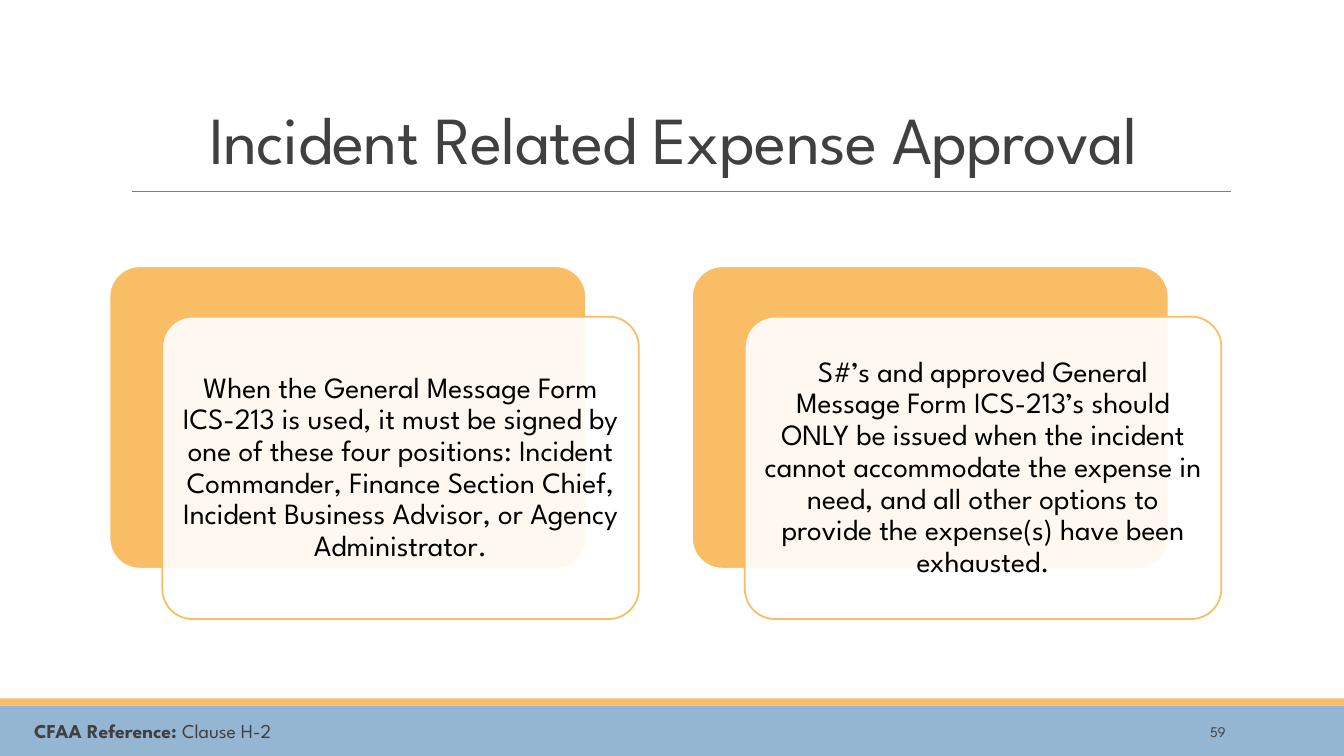
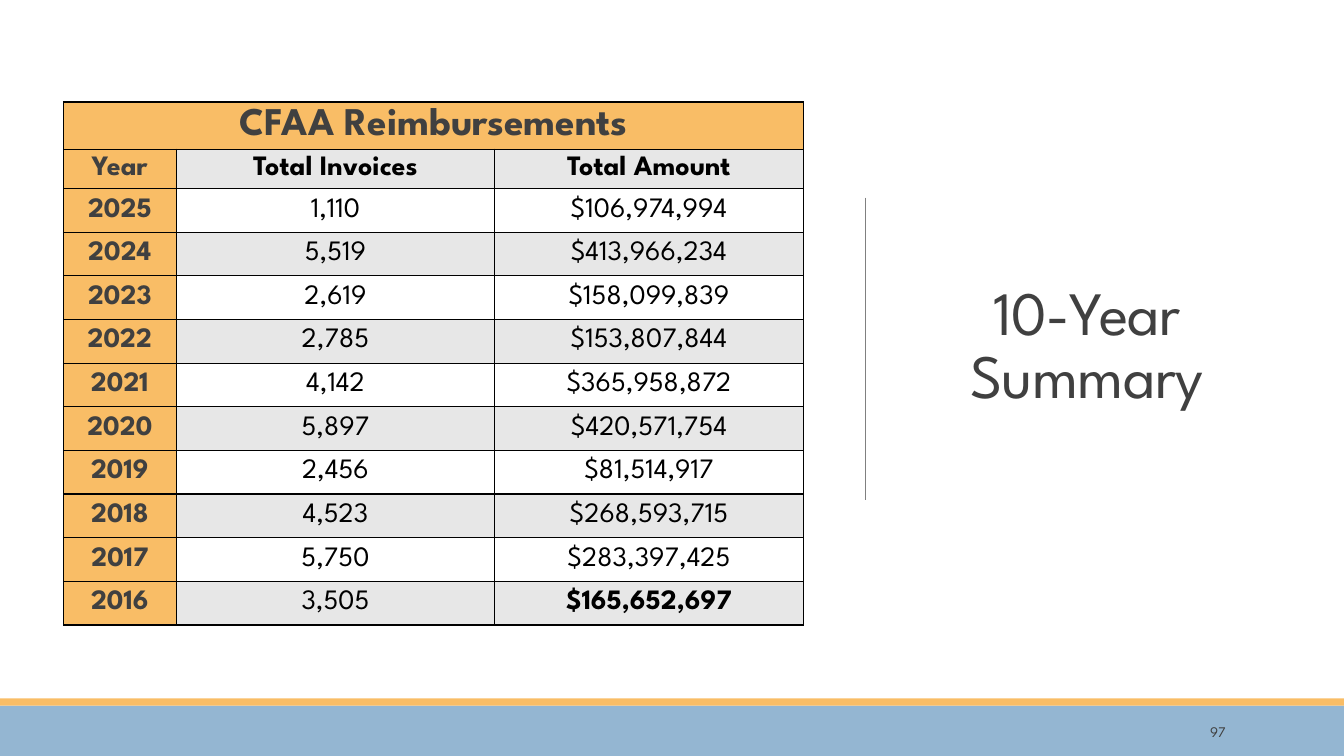
"""Build the expense approval and ten-year reimbursement slides."""
from lxml.etree import SubElement
from pptx import Presentation
from pptx.dml.color import RGBColor
from pptx.enum.shapes import MSO_CONNECTOR, MSO_SHAPE
from pptx.enum.text import MSO_ANCHOR, MSO_AUTO_SIZE, PP_ALIGN
from pptx.oxml import parse_xml
from pptx.oxml.ns import nsdecls, qn
from pptx.util import Cm, Pt

BLUE = RGBColor(0x94, 0xB6, 0xD2)
ORANGE = RGBColor(0xF9, 0xBD, 0x66)
DARK = RGBColor(0x40, 0x40, 0x40)
GREY = RGBColor(0x80, 0x80, 0x80)
LIGHT = RGBColor(0xE7, 0xE7, 0xE7)
BLACK = RGBColor(0, 0, 0)
WHITE = RGBColor(0xFF, 0xFF, 0xFF)
FONT = "League Spartan"


def add_run(paragraph, text, size, color=DARK, bold=False):
    run = paragraph.add_run()
    run.text = text
    run.font.name = FONT
    run.font.size = Pt(size)
    run.font.bold = bold
    run.font.color.rgb = color
    return run


def add_block(slide, kind, left, top, width, height, fill, line=None):
    shape = slide.shapes.add_shape(kind, Cm(left), Cm(top), Cm(width), Cm(height))
    shape.shadow.inherit = False
    shape.fill.solid()
    shape.fill.fore_color.rgb = fill
    if line is None:
        shape.line.fill.background()
    else:
        shape.line.color.rgb = line
        shape.line.width = Pt(1.25)
    return shape


presentation = Presentation()
presentation.slide_width = Cm(33.87)
presentation.slide_height = Cm(19.05)

outlines = [
    ("Incident Related Expense Approval", 48, (3.15, 1.27, 27.64, 3.35),
     MSO_ANCHOR.BOTTOM, (3.33, 4.83, 31.01, 4.83), "59"),
    ("10-Year Summary", 44, (22.71, 1.75, 9.37, 14.05),
     MSO_ANCHOR.MIDDLE, (21.82, 4.98, 21.82, 12.6), "97"),
]
slides = []
title_runs = []
for heading, size, box, anchor, rule_ends, number in outlines:
    slide = presentation.slides.add_slide(presentation.slide_layouts[5])
    slides.append(slide)

    add_block(slide, MSO_SHAPE.RECTANGLE, 0, 17.78, 33.87, 1.27, BLUE)
    add_block(slide, MSO_SHAPE.RECTANGLE, 0, 17.6, 33.87, 0.18, ORANGE)
    rule = slide.shapes.add_connector(MSO_CONNECTOR.STRAIGHT, *map(Cm, rule_ends))
    rule.line.color.rgb = GREY
    rule.line.width = Pt(0.5)
    SubElement(rule._element.spPr, qn("a:effectLst"))

    title = slide.shapes.title
    title.left, title.top, title.width, title.height = map(Cm, box)
    title.text_frame.auto_size = MSO_AUTO_SIZE.NONE
    title.text_frame.vertical_anchor = anchor
    paragraph = title.text_frame.paragraphs[0]
    paragraph.alignment = PP_ALIGN.CENTER
    paragraph.line_spacing = 0.85
    run = add_run(paragraph, heading, size)
    run.font._element.set("spc", "-50")
    title_runs.append(run)

    number_box = slide.shapes.add_textbox(Cm(27.51), Cm(17.93), Cm(3.63), Cm(1.02))
    number_box.text_frame.word_wrap = True
    number_box.text_frame.vertical_anchor = MSO_ANCHOR.MIDDLE
    paragraph = number_box.text_frame.paragraphs[0]
    paragraph.alignment = PP_ALIGN.RIGHT
    add_run(paragraph, number, 10.5)

approval_slide, summary_slide = slides

title_fill = title_runs[0].font._element.find(qn("a:solidFill"))
title_fill.addnext(parse_xml(
    f'<a:effectLst {nsdecls("a")}><a:outerShdw blurRad="38100" dist="38100" dir="2700000">'
    '<a:srgbClr val="000000"><a:alpha val="43000"/></a:srgbClr></a:outerShdw></a:effectLst>'))

statements = [
    "When the General Message Form ICS-213 is used, it must be signed by one of these "
    "four positions: Incident Commander, Finance Section Chief, Incident Business "
    "Advisor, or Agency Administrator.",
    "S#’s and approved General Message Form ICS-213’s should ONLY be issued when the "
    "incident cannot accommodate the expense in need, and all other options to provide "
    "the expense(s) have been exhausted.",
]
for index, statement in enumerate(statements):
    left = 2.76 + index * 14.68
    back = add_block(approval_slide, MSO_SHAPE.ROUNDED_RECTANGLE,
                     left, 6.71, 12.01, 7.62, ORANGE, WHITE)
    card = add_block(approval_slide, MSO_SHAPE.ROUNDED_RECTANGLE,
                     left + 1.33, 7.98, 12.01, 7.62, WHITE, ORANGE)
    back.adjustments[0] = card.adjustments[0] = 0.1
    fill_color = card._element.spPr.find(qn("a:solidFill"))[0]
    SubElement(fill_color, qn("a:alpha")).set("val", "90000")
    frame = card.text_frame
    frame.word_wrap = True
    frame.vertical_anchor = MSO_ANCHOR.MIDDLE
    frame.margin_left = frame.margin_right = Cm(0.23)
    paragraph = frame.paragraphs[0]
    paragraph.alignment = PP_ALIGN.CENTER
    paragraph.line_spacing = 0.9
    add_run(paragraph, statement, 21, BLACK)

reference = approval_slide.shapes.add_textbox(Cm(0.61), Cm(17.98), Cm(11.43), Cm(0.86))
reference.text_frame.word_wrap = True
paragraph = reference.text_frame.paragraphs[0]
add_run(paragraph, "CFAA Reference: ", 14, bold=True)
add_run(paragraph, "Clause H-2", 14)

rows = [
    ("CFAA Reimbursements",),
    ("Year", "Total Invoices", "Total Amount"),
    ("2025", "1,110", "$106,974,994"),
    ("2024", "5,519", "$413,966,234"),
    ("2023", "2,619", "$158,099,839"),
    ("2022", "2,785", "$153,807,844"),
    ("2021", "4,142", "$365,958,872"),
    ("2020", "5,897", "$420,571,754"),
    ("2019", "2,456", "$81,514,917"),
    ("2018", "4,523", "$268,593,715"),
    ("2017", "5,750", "$283,397,425"),
    ("2016", "3,505", "$165,652,697"),
]
column_widths = [2.84, 8.03, 7.77]
row_heights = [1.19, 0.99] + [1.1] * 10
table = summary_slide.shapes.add_table(
    len(rows), len(column_widths), Cm(1.6), Cm(2.57),
    Cm(sum(column_widths)), Cm(sum(row_heights))).table
table.first_row = table.horz_banding = False
for column, width in zip(table.columns, column_widths):
    column.width = Cm(width)
for row, height in zip(table.rows, row_heights):
    row.height = Cm(height)
table.cell(0, 0).merge(table.cell(0, 2))

last_row = len(rows) - 1
for row_index in range(len(rows)):
    for column_index in range(len(column_widths)):
        cell = table.cell(row_index, column_index)
        properties = cell._tc.get_or_add_tcPr()
        for side in ("lnL", "lnR", "lnT", "lnB"):
            properties.append(parse_xml(
                f'<a:{side} {nsdecls("a")} w="12700"><a:solidFill>'
                f'<a:srgbClr val="{BLACK}"/></a:solidFill></a:{side}>'))
        is_heading = row_index == 0 or column_index == 0
        cell.fill.solid()
        cell.fill.fore_color.rgb = ORANGE if is_heading else LIGHT if row_index % 2 else WHITE
        cell.vertical_anchor = MSO_ANCHOR.MIDDLE
        cell.margin_left = cell.margin_right = Cm(0.18)
        cell.margin_top = cell.margin_bottom = 0
        if cell.is_spanned:
            continue
        paragraph = cell.text_frame.paragraphs[0]
        paragraph.alignment = PP_ALIGN.CENTER
        is_bold = is_heading or row_index == 1 or (row_index, column_index) == (last_row, 2)
        add_run(paragraph, rows[row_index][column_index], 20 if row_index else 28,
                DARK if is_heading else BLACK, is_bold)

presentation.save("out.pptx")
